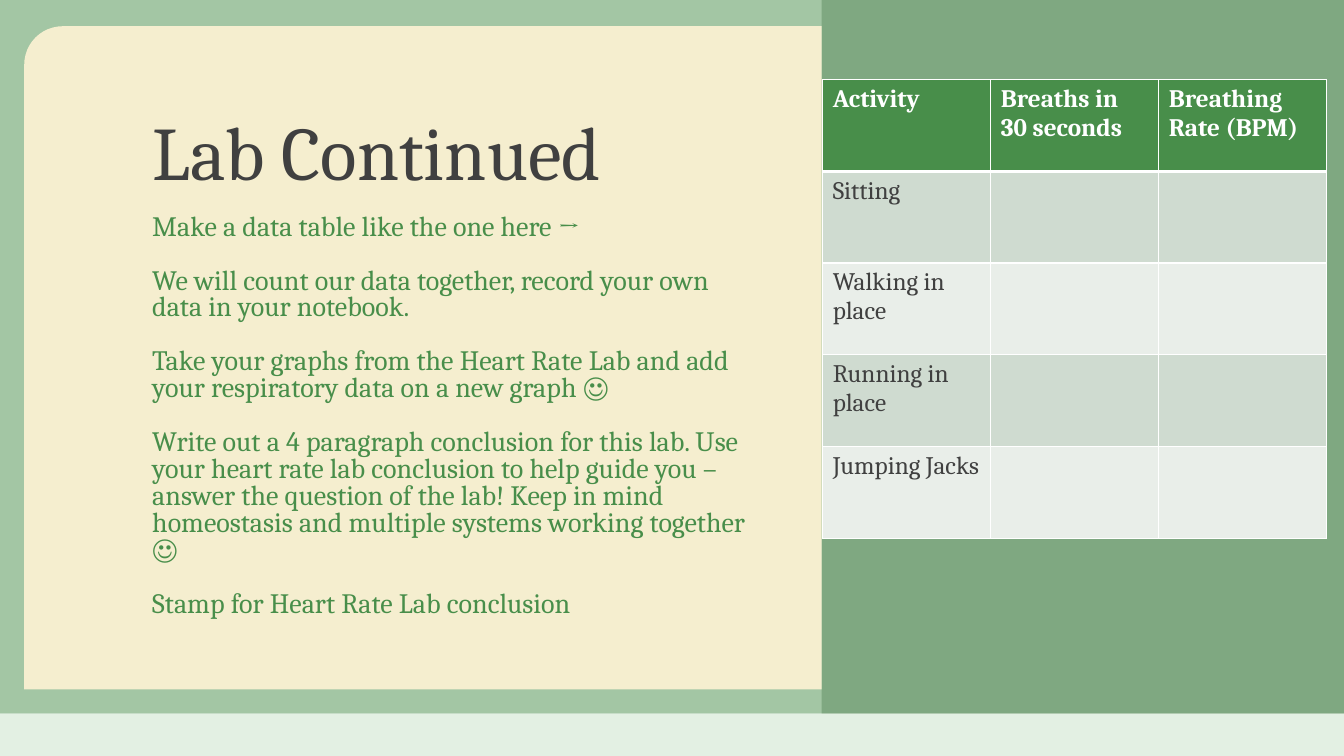
from lxml.etree import SubElement
from pptx import Presentation
from pptx.dml.color import RGBColor
from pptx.enum.shapes import MSO_SHAPE
from pptx.enum.text import MSO_ANCHOR, MSO_AUTO_SIZE, PP_ALIGN
from pptx.oxml import parse_xml
from pptx.oxml.ns import nsdecls, qn
from pptx.util import Inches, Pt

FONT = "Cambria"
COLORS = {
    "green": "488E4A",
    "dark_green": "366A38",
    "pale_green": "D8EBD8",
    "cream": "F5EECF",
    "text": "404040",
    "white": "FFFFFF",
    "odd_row": "CFDBD0",
    "even_row": "E9EEE9",
}
INSTRUCTIONS = [
    "Make a data table like the one here →",
    "We will count our data together, record your own data in your notebook.",
    "Take your graphs from the Heart Rate Lab and add your respiratory data on a new graph ☺",
    "Write out a 4 paragraph conclusion for this lab. Use your heart rate lab conclusion "
    "to help guide you – answer the question of the lab! Keep in mind homeostasis and "
    "multiple systems working together ☺",
    "Stamp for Heart Rate Lab conclusion",
]
HEADERS = ["Activity", "Breaths in 30 seconds", "Breathing Rate (BPM)"]
ACTIVITIES = ["Sitting", "Walking in place", "Running in place", "Jumping Jacks"]


def rgb(name):
    return RGBColor.from_string(COLORS[name])


def add_panel(page, box, color, opacity=100, kind=MSO_SHAPE.RECTANGLE):
    panel = page.shapes.add_shape(kind, *map(Inches, box))
    panel.shadow.inherit = False
    panel.line.fill.background()
    panel.fill.solid()
    panel.fill.fore_color.rgb = rgb(color)
    if opacity < 100:
        tint = panel._element.spPr.find(qn("a:solidFill"))[0]
        SubElement(tint, qn("a:alpha"), val=str(opacity * 1000))
    return panel


def style_para(para, size, color, bold=False):
    para.font.name = FONT
    para.font.size = Pt(size)
    para.font.bold = bold
    para.font.color.rgb = rgb(color)


def fill_placeholder(page, holder, box, lines, size, color, spacing, gap, anchor):
    page.shapes._spTree.append(holder._element)
    holder.left, holder.top, holder.width, holder.height = map(Inches, box)
    frame = holder.text_frame
    frame.text = "\n".join(lines)
    frame.word_wrap = True
    frame.auto_size = MSO_AUTO_SIZE.NONE
    frame.vertical_anchor = anchor
    for index, para in enumerate(frame.paragraphs):
        para.alignment = PP_ALIGN.LEFT
        para.line_spacing = spacing
        para.space_before = Pt(gap if index else 0)
        properties = para._p.get_or_add_pPr()
        properties.set("marL", "0")
        properties.set("indent", "0")
        SubElement(properties, qn("a:buNone"))
        style_para(para, size, color)


def set_borders(cell, top, bottom):
    widths = {"lnL": 1, "lnR": 1, "lnT": top, "lnB": bottom}
    for index, (side, width) in enumerate(widths.items()):
        border = parse_xml(
            f'<a:{side} {nsdecls("a")} w="{Pt(width)}"><a:solidFill>'
            f'<a:srgbClr val="{COLORS["white"]}"/></a:solidFill></a:{side}>'
        )
        cell._tc.get_or_add_tcPr().insert(index, border)


def add_data_table(page, box):
    rows = [HEADERS] + [[activity, "", ""] for activity in ACTIVITIES]
    table = page.shapes.add_table(len(rows), len(HEADERS), *map(Inches, box)).table
    for row, texts in enumerate(rows):
        header = row == 0
        fill = "green" if header else "odd_row" if row % 2 else "even_row"
        for column, text in enumerate(texts):
            cell = table.cell(row, column)
            cell.text = text
            cell.fill.solid()
            cell.fill.fore_color.rgb = rgb(fill)
            style_para(cell.text_frame.paragraphs[0], 18, "white" if header else "text", header)
            set_borders(cell, 3 if row == 1 else 1, 3 if header else 1)


def main():
    deck = Presentation()
    deck.slide_width, deck.slide_height = Inches(13.33), Inches(7.5)
    page = deck.slides.add_slide(deck.slide_layouts[1])
    title, body = page.placeholders

    add_panel(page, (0, 0, 13.33, 7.08), "green", 50)
    add_panel(page, (8.15, 0, 5.18, 7.08), "dark_green", 32)
    card = add_panel(page, (0.24, 0.26, 7.91, 6.58), "cream", kind=MSO_SHAPE.ROUND_1_RECTANGLE)
    card.adjustments[0] = 0.058
    card._element.spPr.xfrm.set("flipH", "1")
    add_panel(page, (0, 7.08, 13.33, 0.42), "pale_green", 70)

    fill_placeholder(page, title, (1.41, 0.75, 6.17, 1.25), ["Lab Continued"],
                     54, "text", 0.9, 0, MSO_ANCHOR.BOTTOM)
    fill_placeholder(page, body, (1.41, 2.08, 6.17, 4.42), INSTRUCTIONS,
                     20, "green", 0.8, 19.25, MSO_ANCHOR.TOP)
    add_data_table(page, (8.16, 0.79, 5, 4.55))
    deck.save("out.pptx")


if __name__ == "__main__":
    main()
